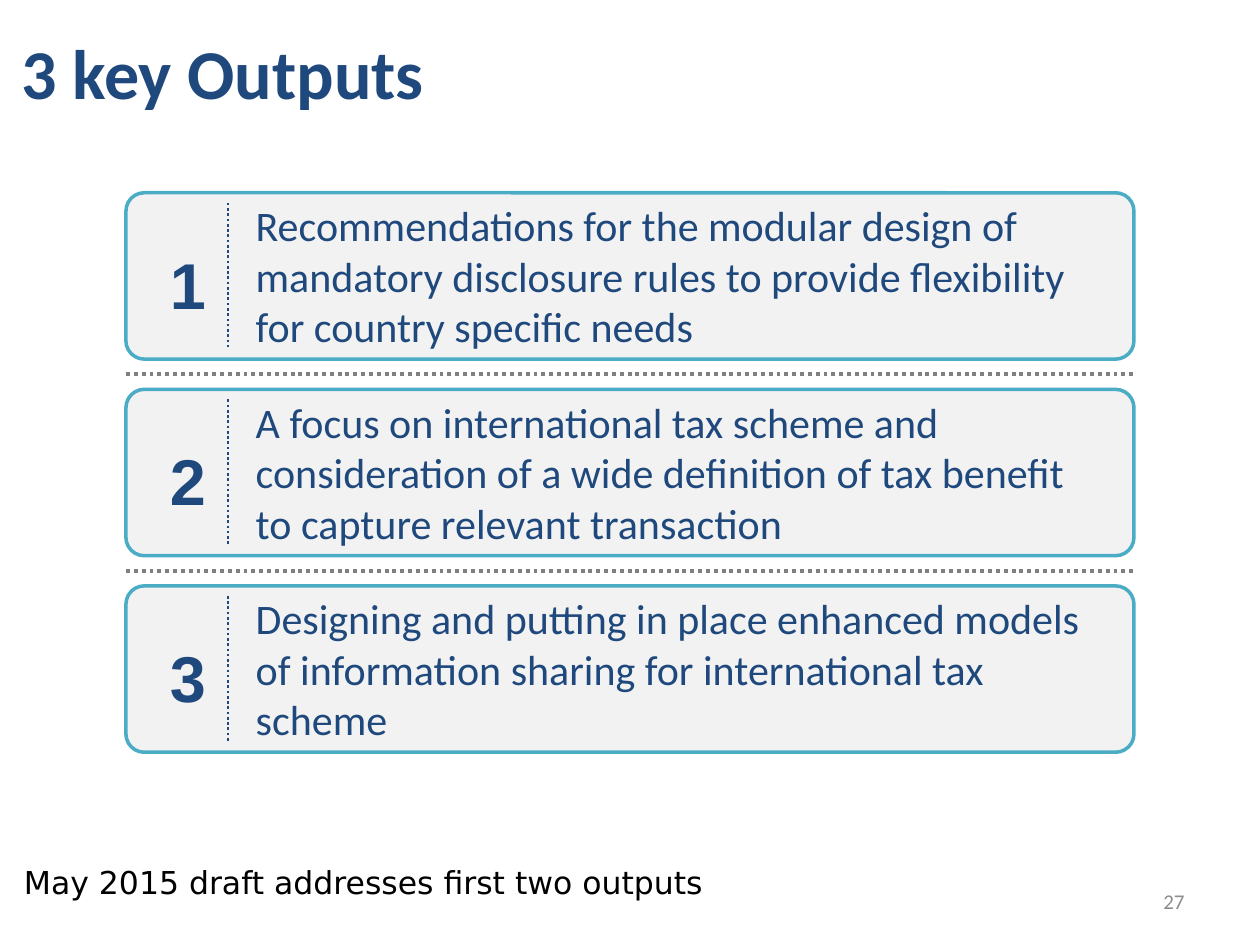
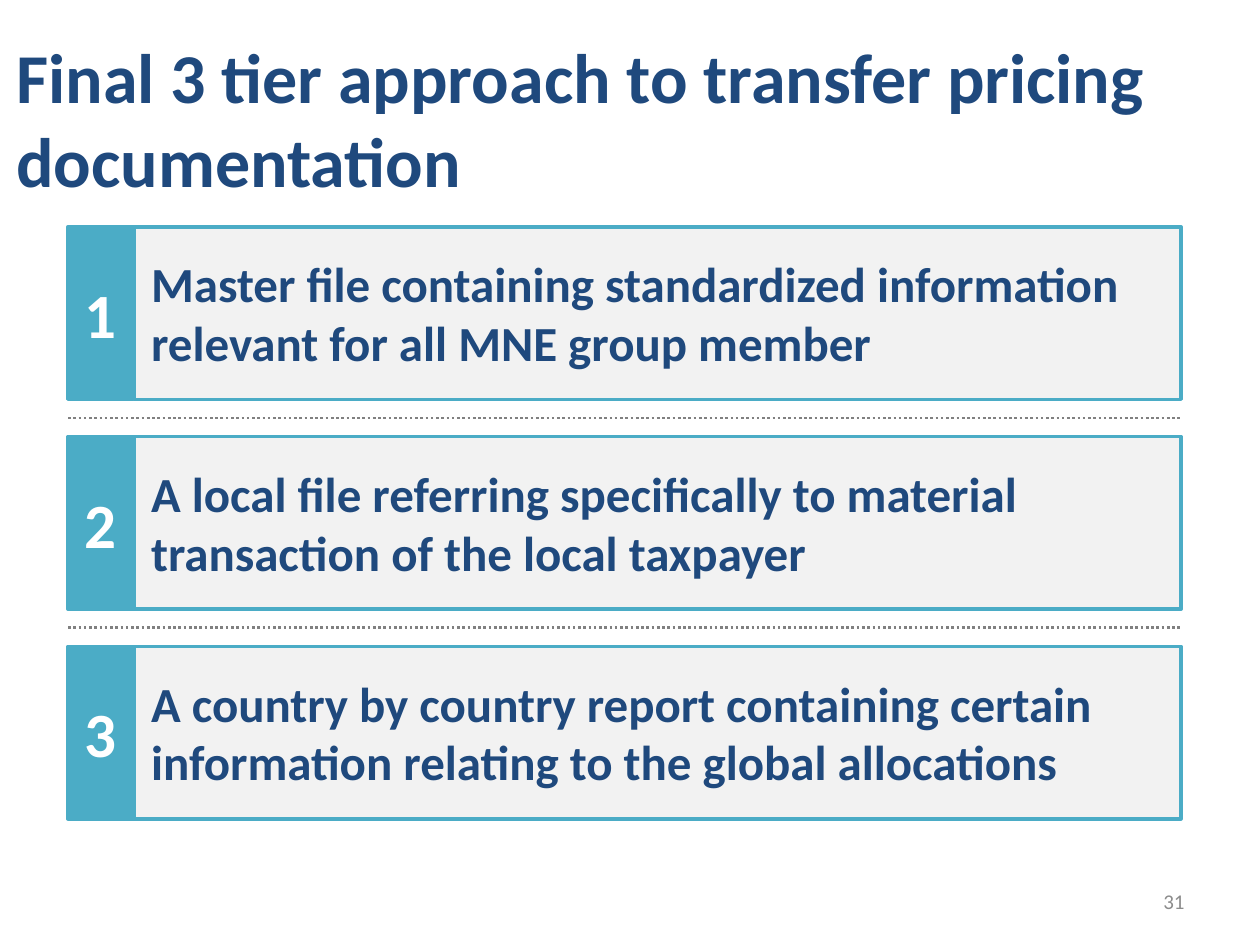
from dataclasses import dataclass

from lxml import etree
from pptx import Presentation
from pptx.dml.color import RGBColor
from pptx.enum.dml import MSO_LINE
from pptx.enum.shapes import MSO_CONNECTOR, MSO_SHAPE
from pptx.enum.text import MSO_ANCHOR, PP_ALIGN
from pptx.oxml.ns import qn
from pptx.util import Pt

STRAIGHT = MSO_CONNECTOR.STRAIGHT
RECTANGLE, ROUNDED = MSO_SHAPE.RECTANGLE, MSO_SHAPE.ROUNDED_RECTANGLE
DOTTED = MSO_LINE.ROUND_DOT
TOP, MIDDLE = MSO_ANCHOR.TOP, MSO_ANCHOR.MIDDLE
LEFT, CENTER, RIGHT = PP_ALIGN.LEFT, PP_ALIGN.CENTER, PP_ALIGN.RIGHT

COLORS = {
    "navy": "1F497D",
    "teal": "4BACC6",
    "panel": "F2F2F2",
    "separator": "808080",
    "page_number": "8C8C8C",
    "white": "FFFFFF",
    "black": "000000",
}


@dataclass(frozen=True)
class Area:
    left: float
    top: float
    width: float
    height: float


@dataclass(frozen=True)
class TextStyle:
    size: float
    color: str = "navy"
    bold: bool = False
    font: str = "Calibri"
    align: PP_ALIGN = LEFT
    anchor: MSO_ANCHOR = MIDDLE
    inset: bool = False
    wrap: bool = True


@dataclass(frozen=True)
class Stack:
    """Equal rows, placed one below the other."""
    left: float
    top: float
    width: float
    height: float
    step: float

    def row_top(self, index: int) -> float:
        return self.top + index * self.step

    def gap_middle(self, index: int) -> float:
        return self.row_top(index) + (self.height + self.step) / 2


TITLE = TextStyle(40, bold=True)
PAGE_NUMBER = TextStyle(12, "page_number", align=RIGHT, inset=True)
OUTPUT_TEXT = TextStyle(24)
OUTPUT_NUMERAL = TextStyle(37, bold=True, font="Arial", align=CENTER,
                           anchor=TOP, inset=True, wrap=False)
NOTE = TextStyle(18, "black", font="DejaVu Sans", anchor=TOP)
TIER_TEXT = TextStyle(28, bold=True, anchor=TOP)
TIER_NUMERAL = TextStyle(36, "white", bold=True, align=CENTER, inset=True)

OUTPUT_STACK = Stack(72, 110.16, 576, 95.04, 112.32)
TIER_STACK = Stack(38.88, 129.6, 636, 98.64, 119.88)
TAB_WIDTH = 37.6

OUTPUTS = (
    "Recommendations for the modular design of mandatory disclosure rules "
    "to provide flexibility for country specific needs",
    "A focus on international tax scheme and consideration of a wide "
    "definition of tax benefit to capture relevant transaction",
    "Designing and putting in place enhanced models of information sharing "
    "for international tax scheme",
)
TIERS = (
    "Master file containing standardized information relevant for all MNE "
    "group member",
    "A local file referring specifically to material transaction of the "
    "local taxpayer",
    "A country by country report containing certain information relating to "
    "the global allocations",
)


def color(name: str) -> RGBColor:
    return RGBColor.from_string(COLORS[name])


def write(shape, text: str, style: TextStyle) -> None:
    frame = shape.text_frame
    frame.word_wrap = style.wrap
    frame.vertical_anchor = style.anchor
    if not style.inset:
        frame.margin_left = frame.margin_right = 0
        frame.margin_top = frame.margin_bottom = 0
    para = frame.paragraphs[0]
    para.text = text
    para.alignment = style.align
    para.font.name = style.font
    para.font.size = Pt(style.size)
    para.font.bold = style.bold
    para.font.color.rgb = color(style.color)


def add_text(page, area: Area, text: str, style: TextStyle) -> None:
    box = page.shapes.add_textbox(Pt(area.left), Pt(area.top),
                                  Pt(area.width), Pt(area.height))
    write(box, text, style)


def add_panel(page, area: Area, fill: str, kind: MSO_SHAPE = RECTANGLE):
    panel = page.shapes.add_shape(kind, Pt(area.left), Pt(area.top),
                                  Pt(area.width), Pt(area.height))
    panel.shadow.inherit = False
    panel.fill.solid()
    panel.fill.fore_color.rgb = color(fill)
    panel.line.color.rgb = color("teal")
    panel.line.width = Pt(2)
    return panel


def add_dotted_line(page, start: tuple[float, float], end: tuple[float, float],
                    name: str, weight: float) -> None:
    line = page.shapes.add_connector(STRAIGHT, Pt(start[0]), Pt(start[1]),
                                     Pt(end[0]), Pt(end[1]))
    line.line.color.rgb = color(name)
    line.line.width = Pt(weight)
    line.line.dash_style = DOTTED
    properties = line._element.find(qn("p:spPr"))
    etree.SubElement(properties, qn("a:effectLst"))


def add_separators(page, stack: Stack, count: int, weight: float) -> None:
    for index in range(count - 1):
        middle = stack.gap_middle(index)
        add_dotted_line(page, (stack.left, middle),
                        (stack.left + stack.width, middle),
                        "separator", weight)


def add_page(deck, title: str, title_area: Area, number: int):
    page = deck.slides.add_slide(deck.slide_layouts[6])
    add_text(page, title_area, title, TITLE)
    add_text(page, Area(516.24, 500.4, 167.76, 28.8), str(number), PAGE_NUMBER)
    return page


def add_output(page, index: int, text: str) -> None:
    stack, top = OUTPUT_STACK, OUTPUT_STACK.row_top(index)
    card = add_panel(page, Area(stack.left, top, stack.width, stack.height),
                     "panel", ROUNDED)
    card.adjustments[0] = 0.11
    add_text(page, Area(146.16, top + 3.6, 477.36, 87.12), text, OUTPUT_TEXT)
    add_dotted_line(page, (130.32, top + 5.76), (130.32, top + 89.28),
                    "navy", 1.5)
    add_text(page, Area(90, top + 25.92, 25.2, 42.5), str(index + 1),
             OUTPUT_NUMERAL)


def add_tier(page, index: int, text: str) -> None:
    stack, top = TIER_STACK, TIER_STACK.row_top(index)
    panel_left = stack.left + TAB_WIDTH
    add_panel(page, Area(panel_left, top, stack.width - TAB_WIDTH,
                         stack.height), "panel")
    add_text(page, Area(86.4, top + 15.3, 583.2, 67.7), text, TIER_TEXT)
    tab = add_panel(page, Area(stack.left, top, TAB_WIDTH, stack.height),
                    "teal")
    write(tab, str(index + 1), TIER_NUMERAL)


def main() -> None:
    deck = Presentation()
    deck.slide_width, deck.slide_height = Pt(720), Pt(540)

    # Key outputs
    page = add_page(deck, "3 key Outputs",
                    Area(12.24, 14.4, 701.28, 52.56), 27)
    for index, text in enumerate(OUTPUTS):
        add_output(page, index, text)
    add_text(page, Area(13.68, 493.2, 514.8, 22.3),
             "May 2015 draft addresses first two outputs", NOTE)
    add_separators(page, OUTPUT_STACK, len(OUTPUTS), 2.25)

    # Documentation tiers
    page = add_page(deck,
                    "Final 3 tier approach to transfer pricing documentation",
                    Area(9.36, 18.72, 701.28, 97.2), 31)
    for index, text in enumerate(TIERS):
        add_tier(page, index, text)
    add_separators(page, TIER_STACK, len(TIERS), 1.5)

    deck.save("out.pptx")


if __name__ == "__main__":
    main()
